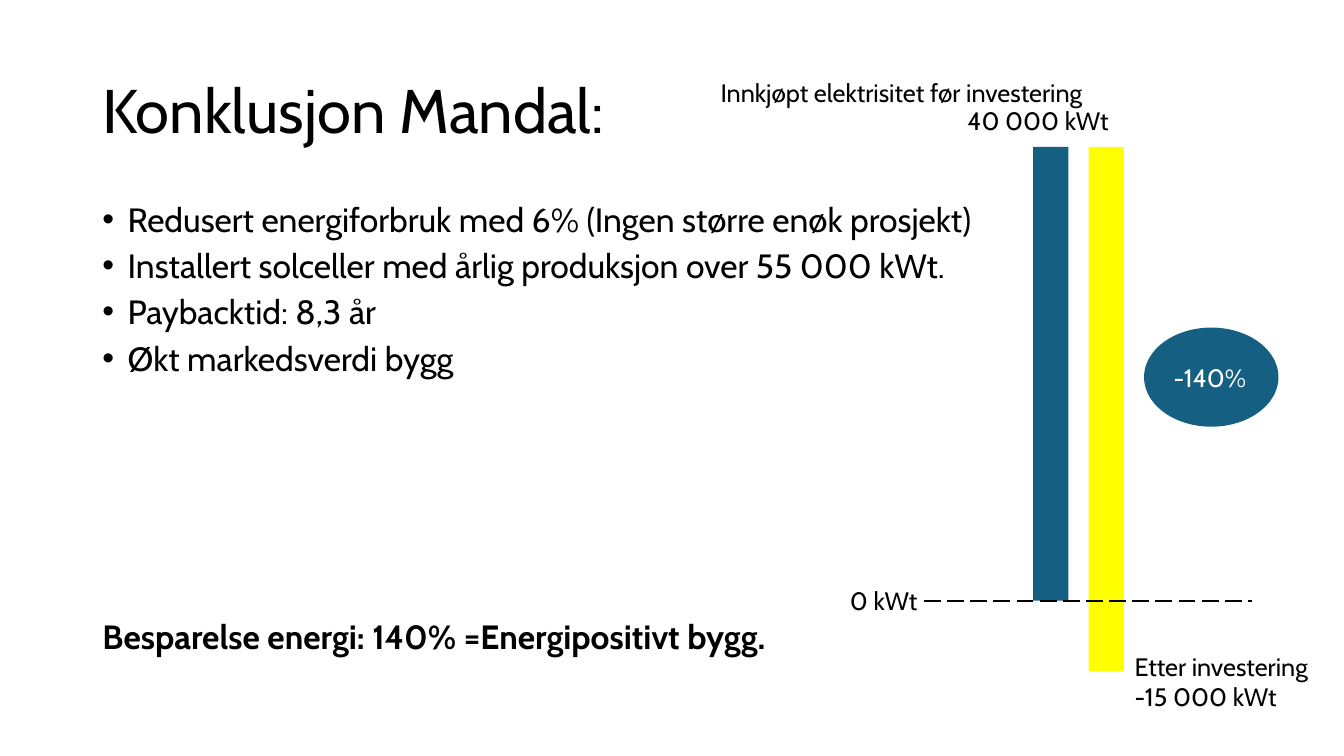
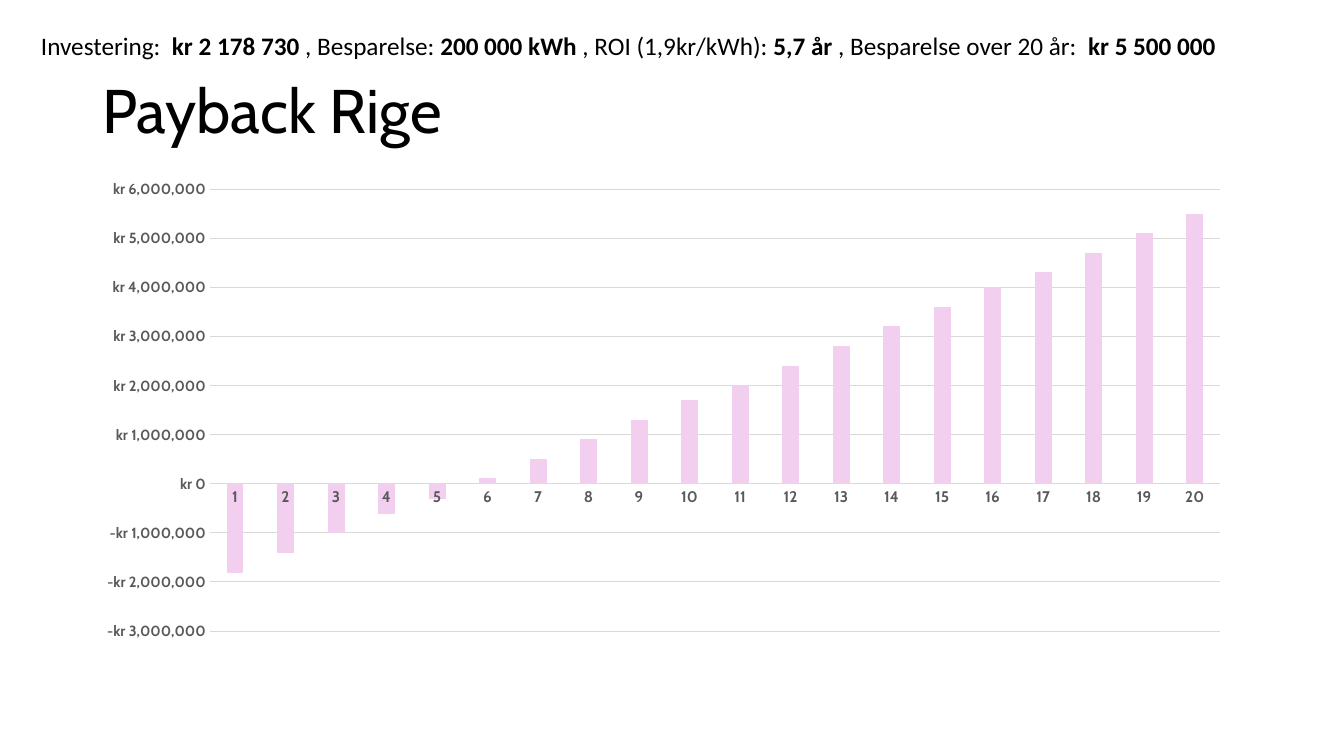
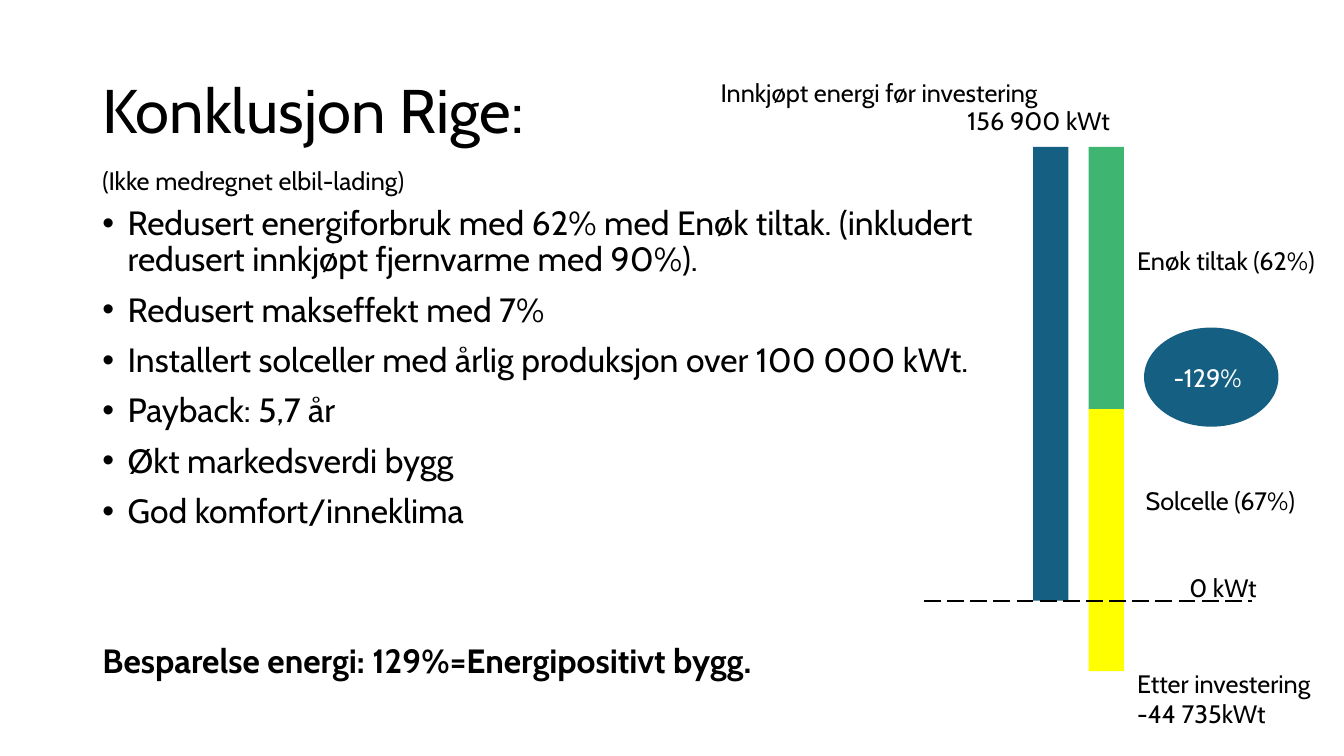
"""Build three slides on energy savings and payback for two buildings."""
from pptx import Presentation
from pptx.chart.data import CategoryChartData
from pptx.dml.color import RGBColor
from pptx.enum.chart import XL_CHART_TYPE, XL_TICK_MARK
from pptx.enum.dml import MSO_LINE
from pptx.enum.shapes import MSO_CONNECTOR, MSO_SHAPE
from pptx.enum.text import MSO_ANCHOR, MSO_AUTO_SIZE, PP_ALIGN
from pptx.oxml.ns import qn
from pptx.util import Inches, Pt
from lxml.etree import SubElement

BLACK = RGBColor(0x00, 0x00, 0x00)
WHITE = RGBColor(0xFF, 0xFF, 0xFF)
BLUE = RGBColor(0x15, 0x60, 0x82)
YELLOW = RGBColor(0xFF, 0xFF, 0x00)
GREEN = RGBColor(0x3E, 0xB6, 0x71)
PINK = RGBColor(0xF2, 0xCF, 0xEE)
GREY = RGBColor(0x59, 0x59, 0x59)
PALE = RGBColor(0xD9, 0xD9, 0xD9)
FACE = "Cabin"

deck = Presentation()
deck.slide_width = Inches(13.33)
deck.slide_height = Inches(7.5)
COL = deck.slide_width / 160
ROW = deck.slide_height / 90
LEFT = 11
ZERO = 71.5
TOP = 17.5


def grid(x, y, w, h):
    """Turn columns and rows into lengths."""
    return int(x * COL), int(y * ROW), int(w * COL), int(h * ROW)


def style(font, size, color=BLACK, bold=None, face=FACE):
    """Set the look of a font."""
    font.name, font.size, font.bold = face, Pt(size), bold
    font.color.rgb = color


heads = [
    ("Konklusjon Mandal:", 1, 66.4),
    ("Payback Rige", 5, 138),
    ("Konklusjon Rige:", 1, 138),
]
for text, kind, wide in heads:
    slide = deck.slides.add_slide(deck.slide_layouts[kind])
    title = slide.shapes.title
    title.left, title.top, title.width, title.height = grid(LEFT, 4.8, wide, 17.4)
    frame = title.text_frame
    frame.text = text
    frame.auto_size = MSO_AUTO_SIZE.NONE
    frame.vertical_anchor = MSO_ANCHOR.MIDDLE
    line = frame.paragraphs[0]
    line.alignment = PP_ALIGN.LEFT
    line.line_spacing = 0.9
    style(line.font, 44)

mandal, payback, rige = deck.slides

lists = [
    (mandal, 112.3, 0.8, 176, [
        "Redusert energiforbruk med 6% (Ingen større enøk prosjekt)",
        "Installert solceller med årlig produksjon over 55 000 kWt.",
        "Paybacktid: 8,3 år",
        "Økt markedsverdi bygg",
        "Besparelse energi: 140% =Energipositivt bygg.",
    ]),
    (rige, 113.8, 0.9, 81, [
        "Redusert energiforbruk med 62% med Enøk tiltak. "
        "(inkludert redusert innkjøpt fjernvarme med 90%).",
        "Redusert makseffekt med 7%",
        "Installert solceller med årlig produksjon over 100 000 kWt.",
        "Payback: 5,7 år",
        "Økt markedsverdi bygg",
        "God komfort/inneklima",
        "Besparelse energi: 129%=Energipositivt bygg.",
    ]),
]
for slide, wide, pitch, gap, items in lists:
    body = slide.placeholders[1]
    body.left, body.top, body.width, body.height = grid(LEFT, 24, wide, 59.3)
    frame = body.text_frame
    frame.text = "\n".join(items)
    frame.auto_size = MSO_AUTO_SIZE.NONE
    for line in frame.paragraphs:
        last = line.text == items[-1]
        line.line_spacing = pitch
        line.space_before = Pt(gap if last else 10)
        props = line._p.get_or_add_pPr()
        indent = 0 if last else Inches(0.25)
        props.set("marL", str(indent))
        props.set("indent", str(-indent))
        if last:
            SubElement(props, qn("a:buNone"))
        else:
            SubElement(props, qn("a:buChar"), char="•")
        style(line.font, 24, bold=last)

BEFORE = (123, TOP, 54, BLUE)
graphs = [
    (mandal, "-140%", [BEFORE, (129.6, TOP, 62.4, YELLOW)], [
        ("Innkjøpt elektrisitet før investering", 84.6, 8.6, 56.5),
        ("40 000 kWt", 114, 12, 19.8),
        ("0 kWt", 100, 69.1, 16),
        ("Etter investering", 133.9, 76.9, 26.1),
        ("-15 000 kWt", 133.9, 80.5, 19.8),
    ]),
    (rige, "-129%", [BEFORE, (129.6, TOP, 31.2, GREEN),
                     (129.6, TOP + 31.2, 31.2, YELLOW)], [
        ("(Ikke medregnet elbil-lading)", LEFT, 19.1, 42.7),
        ("Innkjøpt energi før investering", 84.6, 8.6, 56.5),
        ("156 900 kWt", 114, 12, 19.8),
        ("Enøk tiltak (62%)", 134.2, 28.6, 25.8),
        ("Solcelle (67%)", 135.2, 57.2, 23.3),
        ("0 kWt", 140.4, 67.6, 16),
        ("Etter investering", 134.2, 79, 26.1),
        ("-44 735kWt", 134.2, 82.6, 19.8),
    ]),
]
for slide, share, bars, labels in graphs:
    forms = slide.shapes
    for x, y, tall, color in bars:
        bar = forms.add_shape(MSO_SHAPE.RECTANGLE, *grid(x, y, 4.2, tall))
        bar.shadow.inherit = False
        bar.fill.solid()
        bar.fill.fore_color.rgb = color
        bar.line.fill.background()

    base = forms.add_connector(MSO_CONNECTOR.STRAIGHT, *grid(110, ZERO, 149, ZERO))
    base.line.color.rgb = BLACK
    base.line.width = Pt(1.5)
    base.line.dash_style = MSO_LINE.LONG_DASH
    SubElement(base._element.spPr, qn("a:effectLst"))

    badge = forms.add_shape(MSO_SHAPE.OVAL, *grid(136.2, 39, 16, 11.8))
    badge.shadow.inherit = False
    badge.fill.solid()
    badge.fill.fore_color.rgb = BLUE
    badge.line.fill.background()
    badge.text_frame.text = share
    badge.text_frame.word_wrap = False
    style(badge.text_frame.paragraphs[0].font, 18, WHITE)

    for text, x, y, wide in labels:
        frame = forms.add_textbox(*grid(x, y, wide, 4.8)).text_frame
        frame.word_wrap = True
        frame.text = text
        style(frame.paragraphs[0].font, 18)

data = CategoryChartData()
data.categories = [str(year) for year in range(1, 21)]
tenths = [-18, -14, -10, -6, -3, 1, 5, 9, 13, 17,
          20, 24, 28, 32, 36, 40, 43, 47, 51, 55]
data.add_series("Series 1", [value * 100000 for value in tenths])
chart = payback.shapes.add_chart(
    XL_CHART_TYPE.COLUMN_CLUSTERED, *grid(10, 20.3, 138, 57.1), data).chart
chart.has_title = False
chart.has_legend = False
style(chart.font, 10)

plot = chart.plots[0]
plot.gap_width = 219
plot.overlap = -27
plot.vary_by_categories = False
series = plot.series[0]
series.invert_if_negative = False
series.format.fill.solid()
series.format.fill.fore_color.rgb = PINK
series.format.line.color.rgb = PINK
series.format.line.width = Pt(0.75)

years, money = chart.category_axis, chart.value_axis
for axis, size in [(years, 11), (money, 10.5)]:
    axis.major_tick_mark = axis.minor_tick_mark = XL_TICK_MARK.NONE
    style(axis.tick_labels.font, size, GREY, True)
money.minimum_scale = -3000000
money.maximum_scale = 6000000
money.major_unit = 1000000
money.tick_labels.number_format = '"kr"\\ #,##0'
money.tick_labels.number_format_is_linked = False
money.format.line.fill.background()
for rule in (years.format.line, money.major_gridlines.format.line):
    rule.color.rgb = PALE
    rule.width = Pt(0.75)

frame = payback.shapes.add_textbox(*grid(3.7, 3, 155.2, 4.8)).text_frame
frame.word_wrap = True
line = frame.paragraphs[0]
style(line.font, 18, face="Calibri")
facts = [
    ("Investering: ", " kr 2 178 730 "),
    (", Besparelse: ", "200 000 kWh "),
    (", ROI (1,9kr/kWh): ", "5,7 år "),
    (", Besparelse over 20 år: ", " kr 5 500 000"),
]
for name, value in facts:
    line.add_run().text = name
    run = line.add_run()
    run.text = value
    run.font.bold = True

deck.save("out.pptx")
